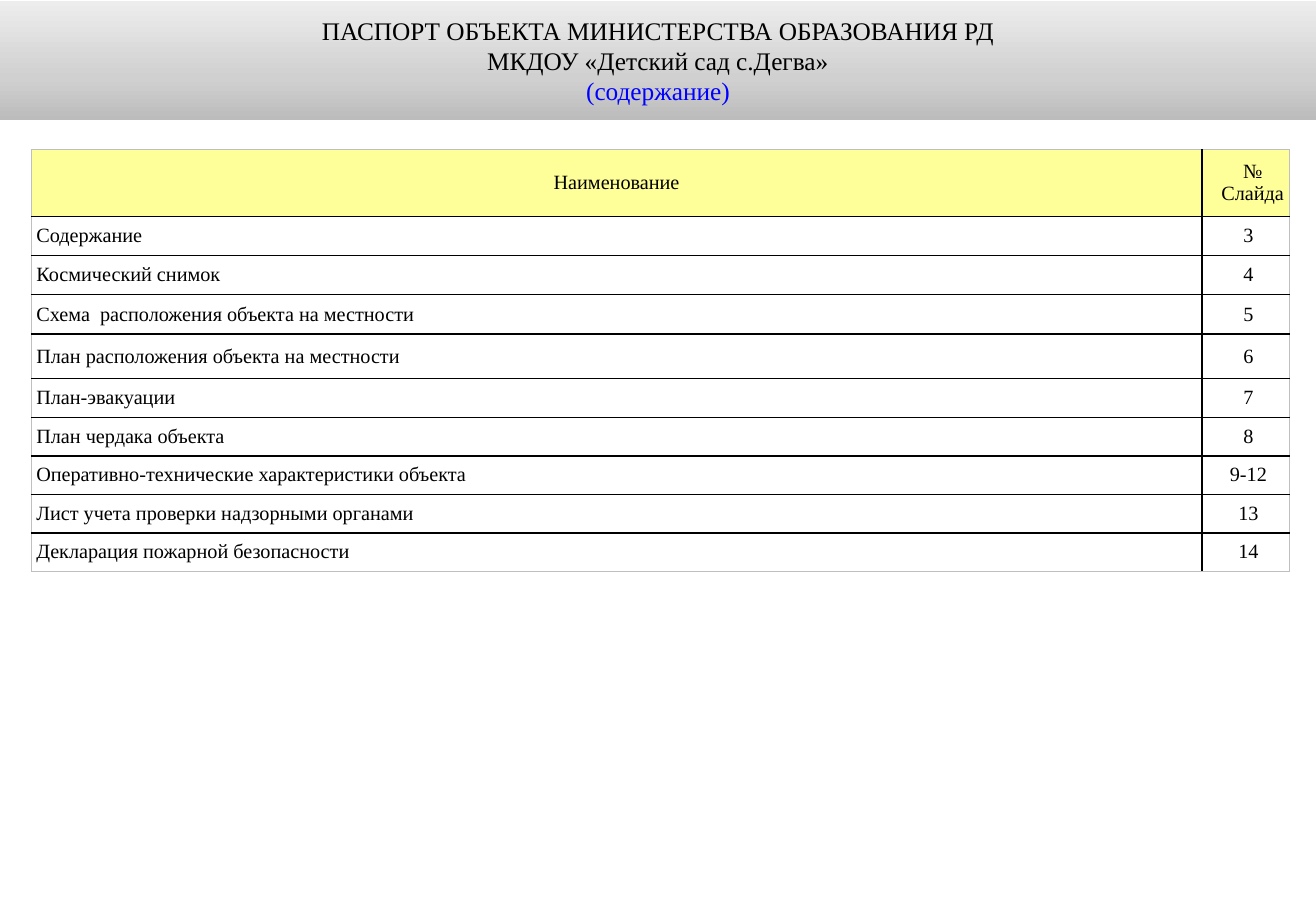
import copy

import pptx
import pptx.dml.color
import pptx.enum.shapes
import pptx.enum.text
import pptx.oxml
import pptx.oxml.ns
import pptx.util

Pt = pptx.util.Pt
ALIGN = pptx.enum.text.PP_ALIGN
MIDDLE = pptx.enum.text.MSO_ANCHOR.MIDDLE

# Content
TITLE = [
    ("ПАСПОРТ ОБЪЕКТА МИНИСТЕРСТВА ОБРАЗОВАНИЯ РД", "text"),
    ("МКДОУ «Детский сад с.Дегва»", "text"),
    ("(содержание)", "accent"),
]
HEADER = ("Наименование", "№\nСлайда")
CONTENTS = [
    ("Содержание", "3"),
    ("Космический снимок", "4"),
    ("Схема  расположения объекта на местности", "5"),
    ("План расположения объекта на местности", "6"),
    ("План-эвакуации", "7"),
    ("План чердака объекта", "8"),
    ("Оперативно-технические характеристики объекта", "9-12"),
    ("Лист учета проверки надзорными органами", "13"),
    ("Декларация пожарной безопасности", "14"),
]

# Look
THEME = {
    "font": "Times New Roman",
    "title_size": 15,
    "table_size": 12,
    "text": "000000",
    "accent": "0000FF",
    "header_fill": "FFFF99",
    "banner": [(0, "BCBCBC"), (0.35, "D0D0D0"), (1, "EDEDED")],
    "inner_line": ("000000", 1),
    "outer_line": ("BFBFBF", 0.5),
}

# Layout, in points
PAGE_WIDTH, PAGE_HEIGHT = 780, 540
BANNER_TOP, BANNER_HEIGHT = 0.5, 70.5
TABLE_LEFT, TABLE_TOP = 18.5, 88.5
COLUMN_WIDTHS = [694, 52]
ROW_HEIGHTS = [39.7, 23.4, 23.1, 23.4, 26.4, 23.1, 22.8, 22.8, 22.8, 22.6]
HEADER_INDENTS = (0, 8)
BODY_INDENTS = (3, 3)


def rgb(code):
    return pptx.dml.color.RGBColor.from_string(code)


def assign(target, values):
    for name, value in values.items():
        setattr(target, name, value)


def write(frame, lines, size, align, indent=0):
    """Fill a text frame with (text, colour name) lines."""
    for number, (text, colour) in enumerate(lines):
        para = frame.add_paragraph() if number else frame.paragraphs[0]
        para.alignment = align
        if indent:
            para._p.get_or_add_pPr().set("marL", str(Pt(indent)))
        span = para.add_run()
        span.text = text
        assign(span.font, {"name": THEME["font"], "size": Pt(size)})
        span.font.color.rgb = rgb(THEME[colour])


def set_borders(cell, outer_sides):
    for side in "LRTB":
        colour, width = THEME["outer_line" if side in outer_sides else "inner_line"]
        cell._tc.get_or_add_tcPr().append(pptx.oxml.parse_xml(
            f'<a:ln{side} {pptx.oxml.ns.nsdecls("a")} w="{Pt(width)}"><a:solidFill>'
            f'<a:srgbClr val="{colour}"/></a:solidFill></a:ln{side}>'))


def add_banner(page):
    box = page.shapes.add_shape(
        pptx.enum.shapes.MSO_SHAPE.RECTANGLE,
        0, Pt(BANNER_TOP), Pt(PAGE_WIDTH), Pt(BANNER_HEIGHT))
    box.shadow.inherit = False
    box.line.fill.background()
    # Gradient from the bottom up, with a third stop
    box.fill.gradient()
    box.fill.gradient_angle = 90
    stops = box._element.spPr.find(".//" + pptx.oxml.ns.qn("a:gsLst"))
    stops.append(copy.deepcopy(stops[-1]))
    for stop, (position, colour) in zip(box.fill.gradient_stops, THEME["banner"]):
        stop.position = position
        stop.color.rgb = rgb(colour)
    assign(box.text_frame, {"word_wrap": True, "vertical_anchor": MIDDLE})
    write(box.text_frame, TITLE, THEME["title_size"], ALIGN.CENTER)


def add_contents(page):
    rows = [HEADER] + CONTENTS
    table = page.shapes.add_table(
        len(rows), len(COLUMN_WIDTHS), Pt(TABLE_LEFT), Pt(TABLE_TOP),
        Pt(sum(COLUMN_WIDTHS)), Pt(sum(ROW_HEIGHTS))).table
    assign(table, {"first_row": False, "horz_banding": False})
    for column, width in zip(table.columns, COLUMN_WIDTHS):
        column.width = Pt(width)
    for r, (values, height) in enumerate(zip(rows, ROW_HEIGHTS)):
        table.rows[r].height = Pt(height)
        indents = BODY_INDENTS if r else HEADER_INDENTS
        for c, value in enumerate(values):
            cell = table.cell(r, c)
            assign(cell, {"margin_left": 0, "margin_right": 0, "margin_top": 0,
                          "margin_bottom": 0, "vertical_anchor": MIDDLE})
            outer = "R" if c else "L"
            outer += {0: "T", len(rows) - 1: "B"}.get(r, "")
            set_borders(cell, outer)
            if r:
                cell.fill.background()
            else:
                cell.fill.solid()
                cell.fill.fore_color.rgb = rgb(THEME["header_fill"])
            align = ALIGN.LEFT if r and not c else ALIGN.CENTER
            lines = [(line, "text") for line in value.split("\n")]
            write(cell.text_frame, lines, THEME["table_size"], align, indents[c])


def main():
    deck = pptx.Presentation()
    assign(deck, {"slide_width": Pt(PAGE_WIDTH), "slide_height": Pt(PAGE_HEIGHT)})
    page = deck.slides.add_slide(deck.slide_layouts[6])
    add_banner(page)
    add_contents(page)
    deck.save("out.pptx")


if __name__ == "__main__":
    main()
